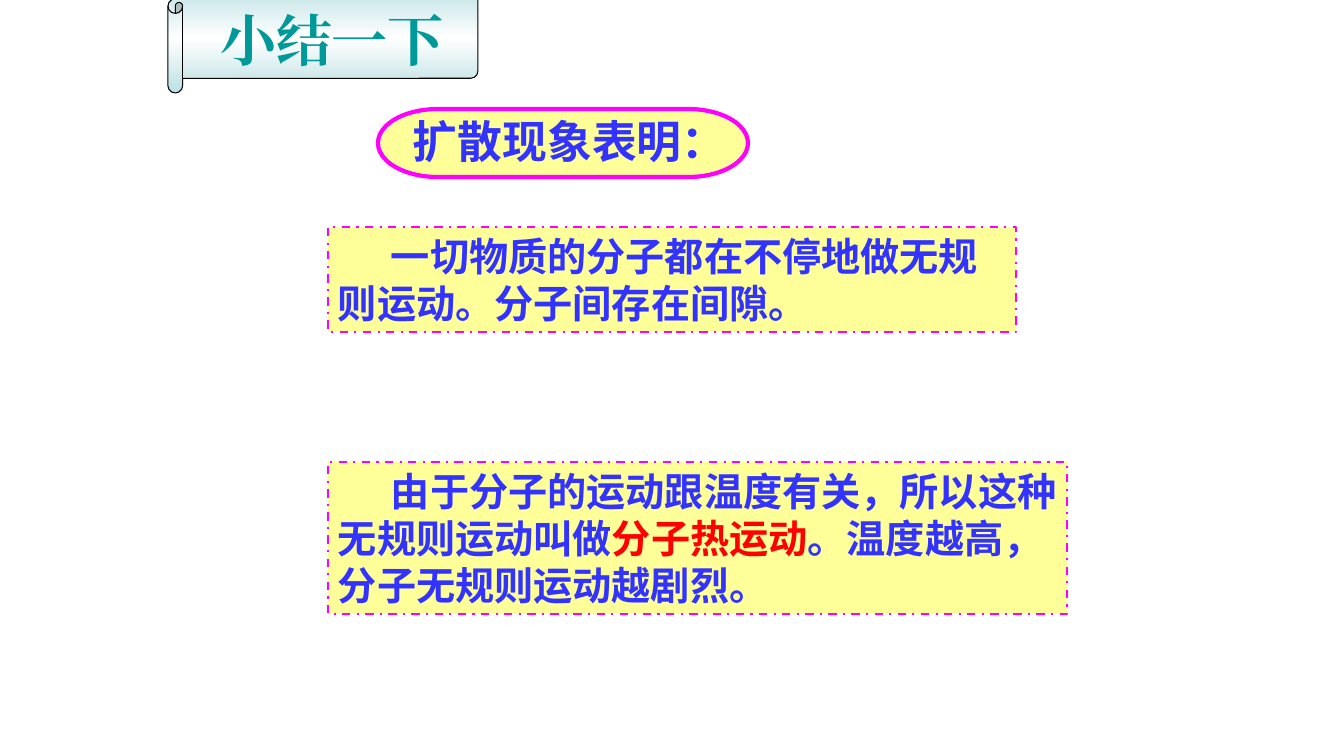
from copy import deepcopy
from dataclasses import dataclass

from pptx import Presentation
from pptx.dml.color import RGBColor as RGB
from pptx.enum.dml import MSO_LINE as Dash
from pptx.enum.shapes import MSO_SHAPE as Shape
from pptx.enum.text import MSO_ANCHOR as Anchor, MSO_AUTO_SIZE as Fit, PP_ALIGN as Align
from pptx.oxml.ns import qn
from pptx.util import Pt

PX = 914400 / 100.8
SLIDE_SIZE = (1344, 756)
TITLE_ONLY = 5


@dataclass(frozen=True)
class Theme:
    paper: RGB = RGB(0xFF, 0xFF, 0x99)
    border: RGB = RGB(0xFF, 0x00, 0xFF)
    ink: RGB = RGB(0x33, 0x33, 0xFF)
    key_term: RGB = RGB(0xFF, 0x00, 0x00)
    title: RGB = RGB(0x00, 0x99, 0x99)
    scroll_edge: RGB = RGB(0xBB, 0xE0, 0xE3)
    scroll_middle: RGB = RGB(0xFF, 0xFF, 0xFF)
    outline: RGB = RGB(0x00, 0x00, 0x00)
    title_font: str = "Times New Roman"
    body_font: str = "Noto Sans CJK SC"
    title_size: int = 40
    heading_size: int = 32
    body_size: int = 28


THEME = Theme()


def px(length):
    return round(length * PX)


def emu(box):
    return [px(length) for length in box]


def add_outlined(slide, kind, box, color, width, dash=None):
    outlined = slide.shapes.add_shape(kind, *emu(box))
    outlined.shadow.inherit = False
    outlined.fill.solid()
    outlined.fill.fore_color.rgb = THEME.paper
    outlined.line.color.rgb = color
    outlined.line.width = Pt(width)
    if dash:
        outlined.line.dash_style = dash
    return outlined


def write(frame, runs, size, font, first_indent=0):
    """Fill a text frame with one left-aligned paragraph of (text, colour) runs."""
    frame.word_wrap = True
    frame.auto_size = Fit.NONE
    frame.vertical_anchor = Anchor.TOP
    paragraph = frame.paragraphs[0]
    paragraph.alignment = Align.LEFT
    if first_indent:
        properties = paragraph._p.get_or_add_pPr()
        properties.set("marL", "0")
        properties.set("indent", str(px(first_indent)))
    for text, color in runs:
        run = paragraph.add_run()
        run.text = text
        run.font.name = font
        run.font.size = Pt(size)
        run.font.bold = True
        run.font.color.rgb = color
        # East Asian typeface follows the Latin one
        latin = run.font._element.find(qn("a:latin"))
        east_asian = deepcopy(latin)
        east_asian.tag = qn("a:ea")
        latin.addnext(east_asian)


def scroll_title(slide, box, text):
    left, top, width, height = box
    # Scroll with a light band across its middle
    scroll = add_outlined(slide, Shape.HORIZONTAL_SCROLL, box, THEME.outline, 0.75)
    scroll.adjustments[0] = 0.135
    scroll.fill.gradient()
    scroll.fill.gradient_angle = 270
    stop_list = scroll._element.spPr.find(qn("a:gradFill")).find(qn("a:gsLst"))
    stop_list.insert(1, deepcopy(stop_list[0]))
    colors = (THEME.scroll_edge, THEME.scroll_middle, THEME.scroll_edge)
    for stop, position, color in zip(scroll.fill.gradient_stops, (0, 0.5, 1), colors):
        stop.position = position
        stop.color.rgb = color

    # Title placeholder, brought in front of the scroll
    title = slide.shapes.title
    title.left, title.top, title.width, title.height = emu(
        (left + 42, top + 16, width - 58, height - 31))
    write(title.text_frame, [(text, THEME.title)], THEME.title_size, THEME.title_font)
    scroll._element.addnext(title._element)


def heading(slide, box, text):
    left, top, width, height = box
    add_outlined(slide, Shape.FLOWCHART_TERMINATOR, box, THEME.border, 3)
    label = slide.shapes.add_textbox(*emu((left + 25, top, width - 17, height - 3)))
    write(label.text_frame, [(text, THEME.ink)], THEME.heading_size, THEME.body_font)


def statement(slide, box, runs):
    panel = add_outlined(slide, Shape.RECTANGLE, box, THEME.border, 1.5, Dash.DASH_DOT)
    write(panel.text_frame, runs, THEME.body_size, THEME.body_font, first_indent=53)


def main():
    deck = Presentation()
    deck.slide_width, deck.slide_height = emu(SLIDE_SIZE)
    slide = deck.slides.add_slide(deck.slide_layouts[TITLE_ONLY])

    scroll_title(slide, (168, -16, 310, 109), "小结一下")
    heading(slide, (378, 109, 370, 68), "扩散现象表明：")
    statement(slide, (328, 227, 688, 105), [
        ("一切物质的分子都在不停地做无规则运动。分子间存在间隙。", THEME.ink),
    ])
    statement(slide, (328, 462, 739, 152), [
        ("由于分子的运动跟温度有关，所以这种无规则运动叫做", THEME.ink),
        ("分子热运动", THEME.key_term),
        ("。温度越高，分子无规则运动越剧烈。", THEME.ink),
    ])
    deck.save("out.pptx")


if __name__ == "__main__":
    main()
